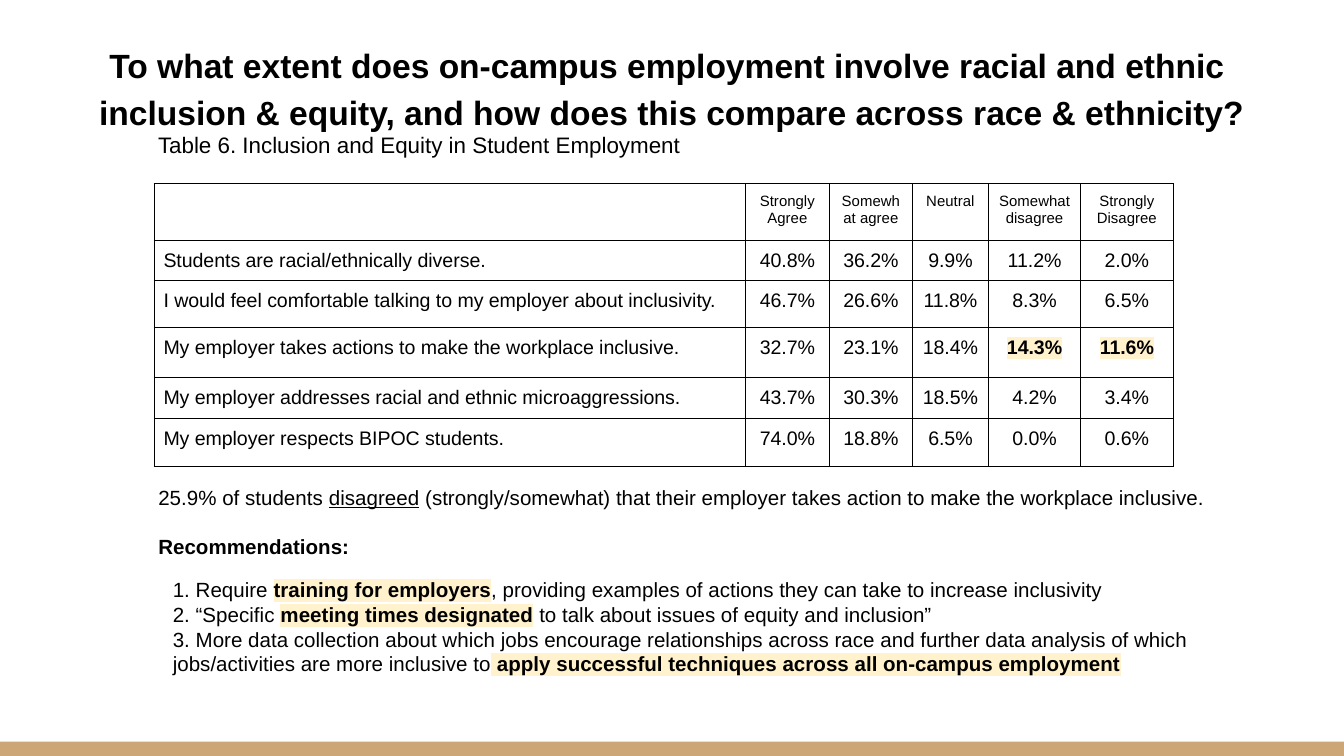
"""Builds the slide on racial and ethnic inclusion in on-campus employment."""
from lxml.etree import SubElement
from pptx import Presentation
from pptx.dml.color import RGBColor
from pptx.enum.shapes import MSO_SHAPE
from pptx.enum.text import MSO_ANCHOR, MSO_AUTO_SIZE, PP_ALIGN
from pptx.oxml.ns import qn
from pptx.util import Pt

COLORS = {"ink": "000000", "band": "CCA677", "highlight": "FFF2CC"}


def write(paragraph, text, size=11, bold=False, underline=False, highlight=False):
    run = paragraph.add_run()
    run.text = text
    font = run.font
    font.size, font.bold, font.underline = Pt(size), bold, underline
    font.color.rgb = RGBColor.from_string(COLORS["ink"])
    if highlight:
        mark = SubElement(font._element, qn("a:highlight"))
        SubElement(mark, qn("a:srgbClr"), val=COLORS["highlight"])
    font.name = "Arial"


def add_borders(cell):
    properties = cell._tc.get_or_add_tcPr()
    for position, side in enumerate(("a:lnL", "a:lnR", "a:lnT", "a:lnB")):
        line = SubElement(properties, qn(side), w=str(Pt(0.75)))
        fill = SubElement(line, qn("a:solidFill"))
        SubElement(fill, qn("a:srgbClr"), val=COLORS["ink"])
        properties.insert(position, line)


prs = Presentation()
prs.slide_width, prs.slide_height = Pt(720), Pt(405)
slide = prs.slides.add_slide(prs.slide_layouts[1])

band = slide.shapes.add_shape(MSO_SHAPE.RECTANGLE, Pt(0), Pt(397.3), Pt(720), Pt(7.7))
band.shadow.inherit = False
band.fill.solid()
band.fill.fore_color.rgb = RGBColor.from_string(COLORS["band"])
band.line.fill.background()

title, findings = slide.placeholders
caption = slide.shapes.add_textbox(Pt(0), Pt(0), Pt(10), Pt(10))
for part, left, top, width, height, anchor in [
    (title, 24.5, 25.2, 671, 52.6, MSO_ANCHOR.BOTTOM),
    (caption, 74.9, 64.1, 509, 44, MSO_ANCHOR.TOP),
    (findings, 74.9, 252.7, 609, 89.3, MSO_ANCHOR.TOP),
]:
    part.left, part.top, part.width, part.height = Pt(left), Pt(top), Pt(width), Pt(height)
    frame = part.text_frame
    frame.word_wrap, frame.auto_size = True, MSO_AUTO_SIZE.NONE
    frame.vertical_anchor = anchor
    frame.margin_left = frame.margin_right = frame.margin_top = frame.margin_bottom = Pt(7.2)

heading = title.text_frame.paragraphs[0]
heading.alignment, heading.line_spacing = PP_ALIGN.CENTER, 1.15
write(heading, "To what extent does on-campus employment involve racial and ethnic ", size=18, bold=True)
heading.add_line_break()
write(heading, "inclusion & equity, and how does this compare across race & ethnicity?", size=18, bold=True)

label = caption.text_frame.paragraphs[0]
label.line_spacing = 0.95
label._p.get_or_add_pPr().set("marL", str(Pt(2.7)))
write(label, "Table 6. Inclusion and Equity in Student Employment", size=12)

responses = [
    ("", "Strongly Agree", "Somewhat agree", "Neutral", "Somewhat disagree", "Strongly Disagree"),
    ("Students are racial/ethnically diverse.", "40.8%", "36.2%", "9.9%", "11.2%", "2.0%"),
    ("I would feel comfortable talking to my employer about inclusivity.",
     "46.7%", "26.6%", "11.8%", "8.3%", "6.5%"),
    ("My employer takes actions to make the workplace inclusive.",
     "32.7%", "23.1%", "18.4%", "14.3%", "11.6%"),
    ("My employer addresses racial and ethnic microaggressions.",
     "43.7%", "30.3%", "18.5%", "4.2%", "3.4%"),
    ("My employer respects BIPOC students.", "74.0%", "18.8%", "6.5%", "0.0%", "0.6%"),
]
column_widths = [316.6, 45.3, 44.2, 41, 49.2, 49.7]
row_heights = [28.2, 21.7, 25.2, 26.8, 21.7, 26]
survey = slide.shapes.add_table(
    len(responses), len(column_widths), Pt(82.6), Pt(98.5), Pt(sum(column_widths)), Pt(sum(row_heights))
).table
survey.first_row = survey.horz_banding = False
for column, width in zip(survey.columns, column_widths):
    column.width = Pt(width)
for r, (answers, height) in enumerate(zip(responses, row_heights)):
    survey.rows[r].height = Pt(height)
    for c, answer in enumerate(answers):
        cell = survey.cell(r, c)
        cell.fill.background()
        cell.margin_left = cell.margin_right = cell.margin_top = cell.margin_bottom = Pt(5)
        add_borders(cell)
        entry = cell.text_frame.paragraphs[0]
        entry.alignment = PP_ALIGN.CENTER if c else PP_ALIGN.LEFT
        stressed = answer in ("14.3%", "11.6%")
        write(entry, answer, size=10.5 if r else 8, bold=stressed, highlight=stressed)

strong = {"bold": True, "highlight": True}
statements = [
    (2.7, 0, [("25.9% of students ", {}), ("disagreed", {"underline": True}),
              (" (strongly/somewhat) that their employer takes action to make the workplace inclusive.", {})]),
    (2.7, 13.1, [("Recommendations:", {"bold": True})]),
    (10.5, 9.8, [("1. Require ", {}), ("training for employers", strong),
                 (", providing examples of actions they can take to increase inclusivity", {})]),
    (10.5, 0, [("2. “Specific ", {}), ("meeting times designated", strong),
               (" to talk about issues of equity and inclusion”", {})]),
    (10.5, 0, [("3. More data collection about which jobs encourage relationships across race and further "
                "data analysis of which jobs/activities are more inclusive to", {}),
               (" apply successful techniques across all on-campus employment", strong)]),
]
for i, (indent, gap, pieces) in enumerate(statements):
    frame = findings.text_frame
    statement = frame.add_paragraph() if i else frame.paragraphs[0]
    statement.space_before = Pt(gap)
    properties = statement._p.get_or_add_pPr()
    properties.set("marL", str(Pt(indent)))
    properties.set("indent", "0")
    SubElement(properties, qn("a:buNone"))
    for text, style in pieces:
        write(statement, text, **style)

prs.save("out.pptx")
